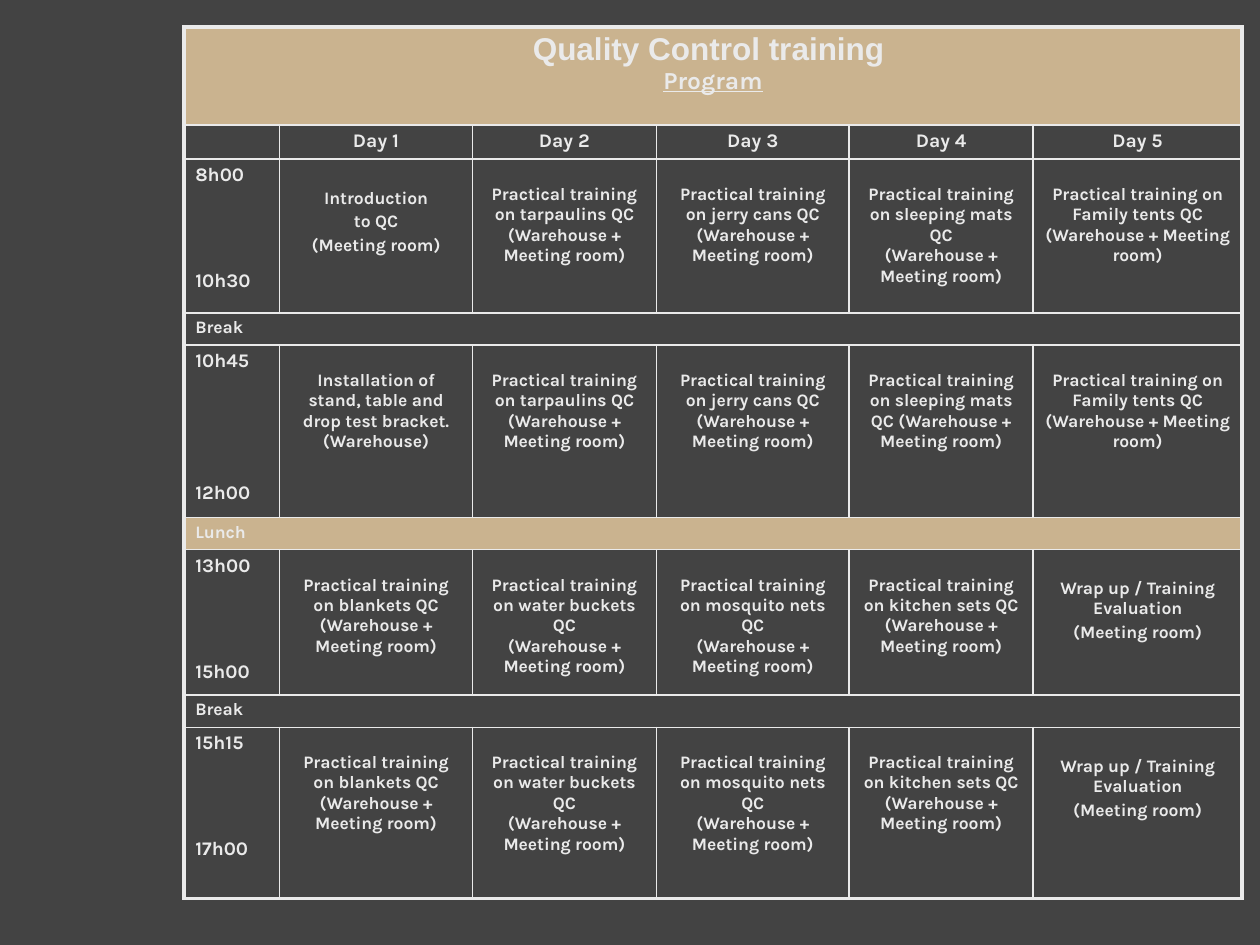
import lxml.etree
import pptx
import pptx.dml.color
import pptx.enum.text
import pptx.oxml.ns
import pptx.util

Pt = pptx.util.Pt
RGBColor = pptx.dml.color.RGBColor
ALIGN = pptx.enum.text.PP_ALIGN
qn = pptx.oxml.ns.qn

BACKGROUND = RGBColor(0x43, 0x43, 0x43)
LIGHT = RGBColor(0xEA, 0xEA, 0xEA)
SAND = RGBColor(0xCA, 0xB3, 0x8F)

COLUMN_WIDTHS = [54.7, 110.2, 105.1, 110.2, 105.1, 119.5]
ROW_HEIGHTS = [56, 19.6, 87.8, 18.5, 98.6, 18.3, 83, 18.5, 98]
TIME_LINE = 15.1    # pitch of the time column
INSET = 2.9
LATE_START = 14.5   # top inset of a session
SPACED_START = 16.5

# Sessions
PLACE = "(Warehouse + Meeting room)"
MEETING = "(Meeting room)"


def practice(subject):
    return [f"Practical training on {subject} QC", PLACE]


INTRODUCTION = ["Introduction", "to QC", MEETING]
INSTALLATION = ["Installation of stand, table and drop test bracket.", "(Warehouse)"]
WRAP_UP = ["Wrap up / Training Evaluation", MEETING]
SPACED_SESSIONS = (INTRODUCTION, WRAP_UP)
TARPAULINS = practice("tarpaulins")
JERRY_CANS = practice("jerry cans")
TENTS = practice("Family tents")
AFTERNOON = [practice(subject) for subject in
             ("blankets", "water buckets", "mosquito nets", "kitchen sets")] + [WRAP_UP]

# Row number: start, end, lines between them, sessions of the five days
BLOCKS = {
    2: ("8h00", "10h30", 3,
        [INTRODUCTION, TARPAULINS, JERRY_CANS, practice("sleeping mats"), TENTS]),
    4: ("10h45", "12h00", 4,
        [INSTALLATION, TARPAULINS, JERRY_CANS,
         [" ".join(practice("sleeping mats"))], TENTS]),
    6: ("13h00", "15h00", 3, AFTERNOON),
    8: ("15h15", "17h00", 3, AFTERNOON),
}
PAUSES = {3: ("Break", None), 5: ("Lunch", SAND), 7: ("Break", None)}


def write_text(para, text, *, size=10, font="Karla", align=ALIGN.LEFT,
               underline=False, space_before=0):
    para.alignment = align
    para.space_before = Pt(space_before)
    span = para.add_run()
    span.text = text
    span.font.name = font
    span.font.size = Pt(size)
    span.font.bold = True
    span.font.underline = underline
    span.font.color.rgb = LIGHT


class ProgramSlide:
    """Holds the table style and the current slide."""
    inner_line = 1
    outer_line = 2.25
    side_inset = 6.5

    def __init__(self, deck):
        self.page = deck.slides.add_slide(deck.slide_layouts[6])
        fill = self.page.background.fill
        fill.solid()
        fill.fore_color.rgb = BACKGROUND

    def add_grid(self, left, top, widths, heights):
        frame = self.page.shapes.add_table(
            len(heights), len(widths), Pt(left), Pt(top),
            Pt(sum(widths)), Pt(sum(heights)))
        self.table = frame.table
        self.table.first_row = False
        self.table.horz_banding = False
        for column, width in zip(self.table.columns, widths):
            column.width = Pt(width)
        for row, height in zip(self.table.rows, heights):
            row.height = Pt(height)

    def add_borders(self, cell, row, column):
        last_row = len(self.table.rows) - 1
        last_column = len(self.table.columns) - 1
        end_column = column + (cell.span_width if cell.is_merge_origin else 1) - 1
        edges = {"lnL": column == 0, "lnR": end_column == last_column,
                 "lnT": row == 0, "lnB": row == last_row}
        properties = cell._tc.get_or_add_tcPr()
        for tag, is_outer in edges.items():
            width = self.outer_line if is_outer else self.inner_line
            line = lxml.etree.SubElement(properties, qn(f"a:{tag}"), w=str(int(Pt(width))))
            paint = lxml.etree.SubElement(line, qn("a:solidFill"))
            lxml.etree.SubElement(paint, qn("a:srgbClr"), val=str(LIGHT))

    def add_cell(self, row, column, lines=(), *, fill=None, top=INSET,
                 across=False, gap=0, **text_format):
        cell = self.table.cell(row, column)
        if across:
            cell.merge(self.table.cell(row, len(self.table.columns) - 1))
        self.add_borders(cell, row, column)
        if fill is None:
            cell.fill.background()
        else:
            cell.fill.solid()
            cell.fill.fore_color.rgb = fill
        cell.margin_left = cell.margin_right = Pt(self.side_inset)
        cell.margin_top, cell.margin_bottom = Pt(top), Pt(INSET)
        frame = cell.text_frame
        for index, line in enumerate(lines):
            para = frame.paragraphs[0] if index == 0 else frame.add_paragraph()
            write_text(para, line, space_before=gap if index else 0, **text_format)
        return cell

    def add_heading(self, row, title, subtitle):
        cell = self.add_cell(row, 0, fill=SAND, across=True)
        para = cell.text_frame.paragraphs[0]
        write_text(para, title, size=18, font="Arial", align=ALIGN.CENTER)
        para.add_line_break()
        write_text(para, subtitle, size=14, underline=True, align=ALIGN.CENTER)

    def add_block(self, row, start, end, blank_lines, sessions):
        self.add_cell(row, 0, [start, end], size=11,
                      gap=blank_lines * TIME_LINE + 2.2)
        for column, session in enumerate(sessions, start=1):
            spaced = session in SPACED_SESSIONS
            self.add_cell(row, column, session, align=ALIGN.CENTER,
                          top=SPACED_START if spaced else LATE_START,
                          gap=2 if spaced else 0)

    def shrink_empty_cells(self):
        for cell in self.table.iter_cells():
            if not cell.text_frame.text:
                para = cell.text_frame.paragraphs[0]
                lxml.etree.SubElement(para._p, qn("a:endParaRPr"), sz="1000")


def main():
    deck = pptx.Presentation()
    deck.slide_width, deck.slide_height = Pt(720), Pt(540)
    slide = ProgramSlide(deck)
    slide.add_grid(105.1, 15.4, COLUMN_WIDTHS, ROW_HEIGHTS)

    # Heading and days
    slide.add_heading(0, "Quality Control training ", "Program")
    slide.add_cell(1, 0)
    for day in range(1, 6):
        slide.add_cell(1, day, [f"Day {day}"], size=11, align=ALIGN.CENTER)

    # Sessions and pauses
    for row, block in BLOCKS.items():
        slide.add_block(row, *block)
    for row, (label, fill) in PAUSES.items():
        slide.add_cell(row, 0, [label], fill=fill, across=True)
    slide.shrink_empty_cells()

    deck.save("out.pptx")


if __name__ == "__main__":
    main()
